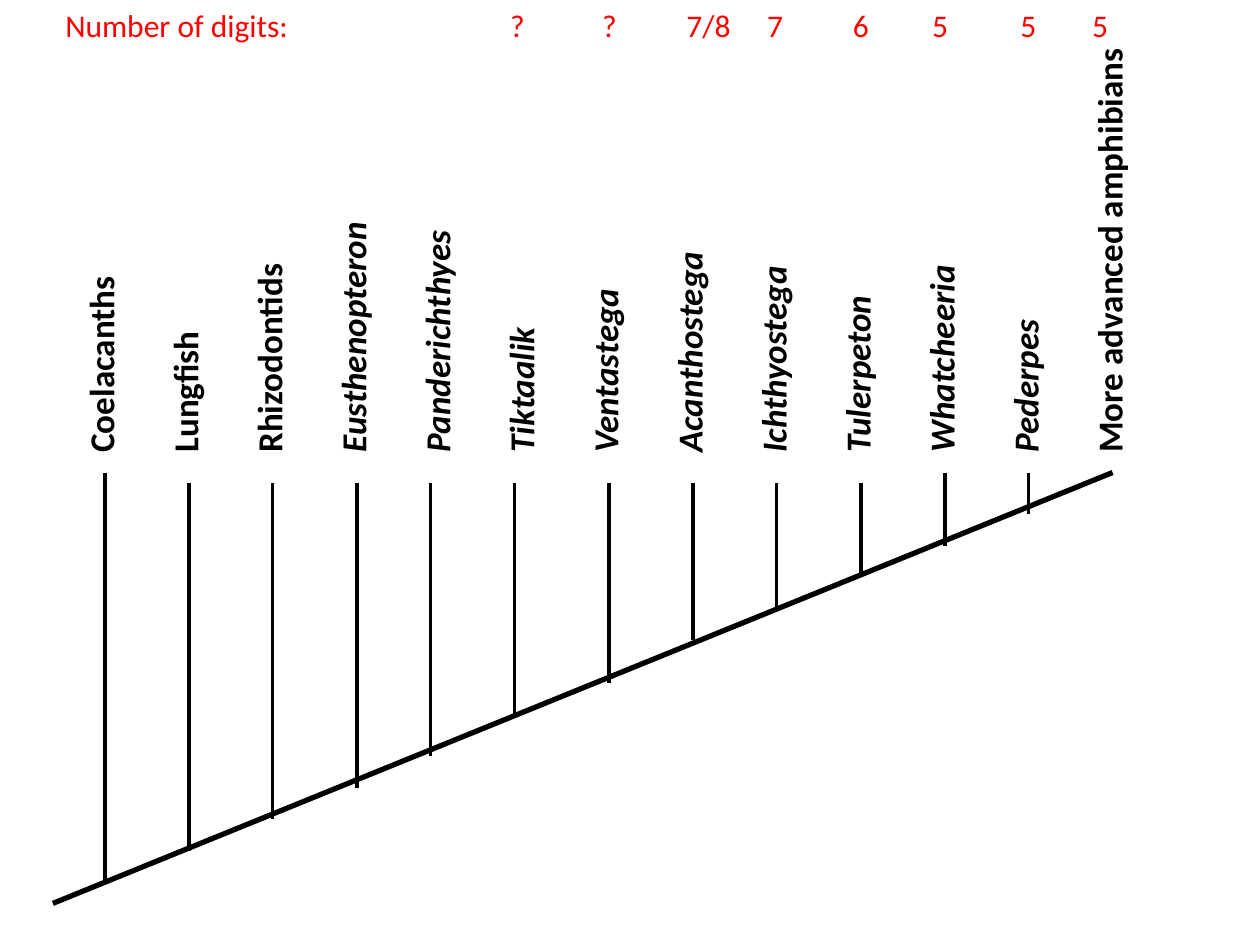
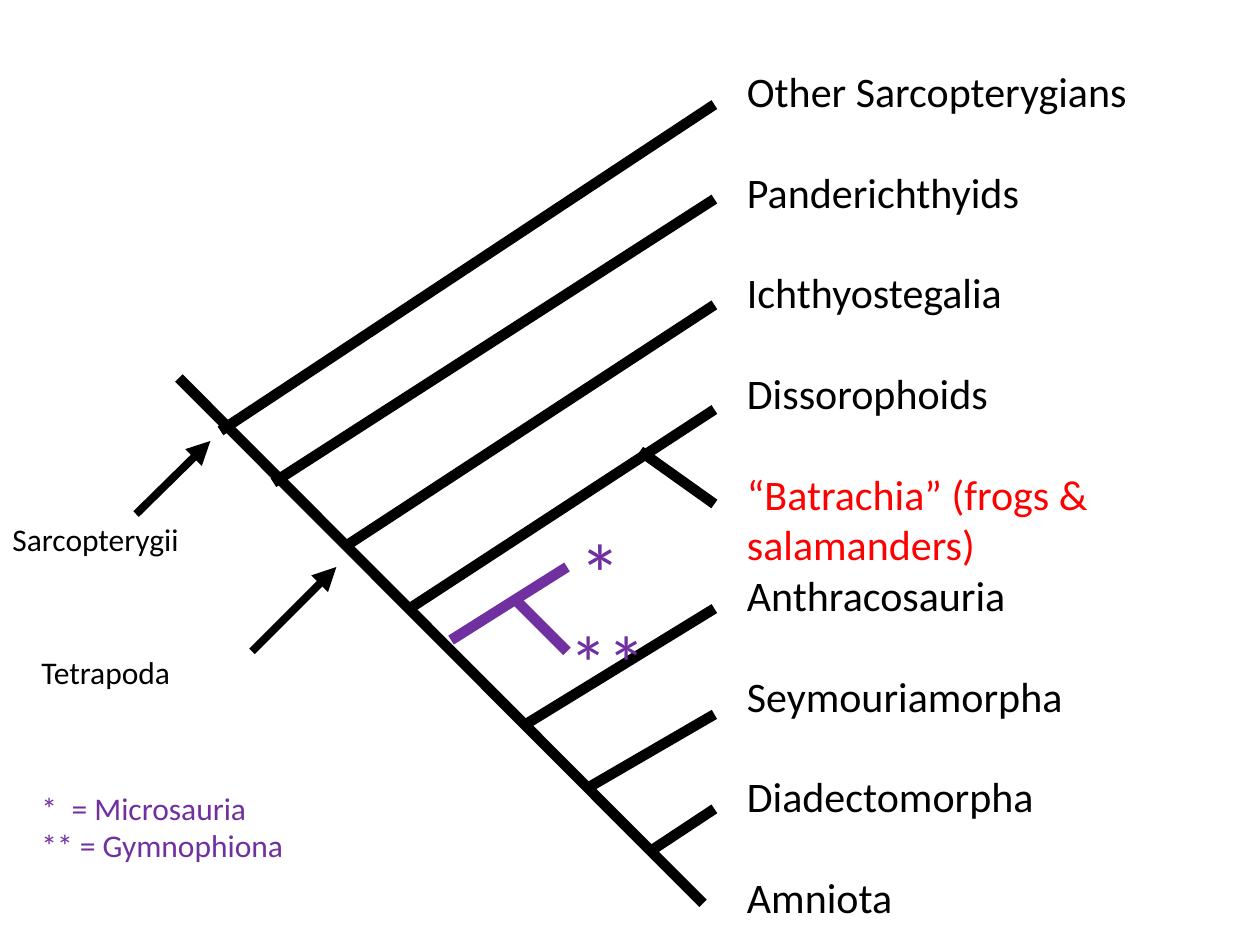
import pptx
import pptx.dml.color
import pptx.enum.shapes
import pptx.enum.text
import pptx.util
from lxml import etree
from pptx.oxml.ns import qn
from pptx.util import Inches

BLACK, RED, PURPLE = "000000", "FF0000", "7030A0"
FONT = "Calibri"
LINE_HEIGHT = 1.2  # line pitch as a multiple of the text size

# Slide 1: name, italic, stem top, stem bottom, stem shift from the even grid
TAXA = [
    ("Coelacanths", False, 3.75, 7, 0),
    ("Lungfish", False, 3.83, 6.75, 0),
    ("Rhizodontids", False, 3.83, 6.5, 0),
    ("Eusthenopteron", True, 3.83, 6.25, 0),
    ("Panderichthyes", True, 3.83, 6, -0.08),
    ("Tiktaalik", True, 3.83, 5.67, -0.08),
    ("Ventastega", True, 3.83, 5.42, 0),
    ("Acanthostega", True, 3.83, 5.08, 0),
    ("Ichthyostega", True, 3.83, 4.83, 0),
    ("Tulerpeton", True, 3.83, 4.58, 0),
    ("Whatcheeria", True, 3.75, 4.33, 0),
    ("Pederpes", True, 3.75, 4.08, 0),
]
CROWN_GROUP = "More advanced amphibians"
FIRST_STEM, STEM_STEP = 0.83, 2 / 3
TRUNK = ((8.83, 3.75), (0.42, 7.17))
# Digit count and its tab position
DIGITS = [("?", 3.53), ("?", 4.26), ("7/8", 4.93), ("7", 5.57),
          ("6", 6.25), ("5", 6.88), ("5", 7.58), ("5", 8.15)]

# Slide 2: label, colour, whether an empty line's height comes before it
CLADES = [
    ("Other Sarcopterygians", BLACK, False),
    ("Panderichthyids", BLACK, True),
    ("Ichthyostegalia", BLACK, True),
    ("Dissorophoids", BLACK, True),
    ("“Batrachia” (frogs &", RED, True),
    ("salamanders)", RED, False),
    ("Anthracosauria", BLACK, False),
    ("Seymouriamorpha", BLACK, True),
    ("Diadectomorpha", BLACK, True),
    ("Amniota", BLACK, True),
]
TIP_X = 5.67
BACKBONE = ((1.42, 3), (5.58, 7.17))
# Branch start and the height of its tip
BRANCHES = [((1.75, 3.42), 0.83), ((2.17, 3.83), 1.58), ((2.75, 4.33), 2.42),
            ((3.25, 4.83), 3.25), ((4.17, 5.75), 4.83), ((4.67, 6.25), 5.67),
            ((5.17, 6.75), 6.42), ((5.08, 3.58), 4)]
MICROSAUR_BRANCHES = [((3.58, 5.08), (4.5, 4.5)), ((4.08, 4.75), (4.5, 5.17))]
NODE_ARROWS = [((1.08, 4.08), (1.67, 3.5)), ((2, 5.17), (2.67, 4.5))]
# Text, box, size, colour
NOTES = [
    ("Sarcopterygii", (0, 4.08, 2.15, 0.5), 18, BLACK),
    ("Tetrapoda", (0.23, 5.13, 1.72, 0.5), 18, BLACK),
    ("*", (4.5, 4.08, 0.7, 0.91), 48, PURPLE),
    ("**", (4.42, 4.83, 1, 0.84), 44, PURPLE),
]
LEGEND = ["*\t= Microsauria", "** = Gymnophiona"]


def colour(value):
    return pptx.dml.color.RGBColor.from_string(value)


def add_text(slide, box, size, lines, tabs=()):
    """Each line is (text, colour, gap before, font format values)."""
    shape = slide.shapes.add_textbox(*map(Inches, box))
    frame = shape.text_frame
    frame.word_wrap = True
    frame.auto_size = pptx.enum.text.MSO_AUTO_SIZE.NONE
    pitch = pptx.util.Pt(size * LINE_HEIGHT)
    for index, (text, text_colour, gap, font_format) in enumerate(lines):
        paragraph = frame.add_paragraph() if index else frame.paragraphs[0]
        paragraph.line_spacing = pitch
        paragraph.space_before = pitch if gap else 0
        if tabs:
            properties = paragraph._p.get_or_add_pPr()
            tab_list = etree.SubElement(properties, qn("a:tabLst"))
            for position in tabs:
                etree.SubElement(tab_list, qn("a:tab"),
                                 pos=str(Inches(position)), algn="l")
        run = paragraph.add_run()
        run.text = text
        values = {"name": FONT, "size": pptx.util.Pt(size), **font_format}
        for attribute, value in values.items():
            setattr(run.font, attribute, value)
        run.font.color.rgb = colour(text_colour)
    return shape


def add_line(slide, start, end, width, line_colour=BLACK, arrow=False):
    connector = slide.shapes.add_connector(
        pptx.enum.shapes.MSO_CONNECTOR.STRAIGHT, *map(Inches, (*start, *end)))
    connector.line.width = pptx.util.Pt(width)
    connector.line.color.rgb = colour(line_colour)
    if arrow:
        etree.SubElement(connector.line._get_or_add_ln(), qn("a:tailEnd"), type="triangle")
    etree.SubElement(connector._element.spPr, qn("a:effectLst"))


def build_digit_slide(slide):
    # Upright names, one column per taxon
    names = [(name, italic) for name, italic, *_ in TAXA] + [(CROWN_GROUP, False)]
    lines = [(name, BLACK, index > 0, {"bold": True, "italic": italic})
             for index, (name, italic) in enumerate(names)]
    add_text(slide, (3.04, -2.37, 3.6, 8.52), 20, lines).rotation = 270

    # Trunk and stems
    add_line(slide, *TRUNK, 3)
    for index, (_, _, top, bottom, shift) in enumerate(TAXA):
        x = FIRST_STEM + index * STEM_STEP + shift
        add_line(slide, (x, top), (x, bottom), 2.25)

    # Digit counts on tab stops
    counts, tabs = zip(*DIGITS)
    text = "\t".join(("Number of digits:", *counts))
    add_text(slide, (0.42, 0, 8.9, 0.4), 18, [(text, RED, False, {})], tabs)


def build_clade_slide(slide):
    # Tip labels
    add_text(slide, (5.83, 0.47, 3.5, 6.97), 24,
             [(*clade, {}) for clade in CLADES])

    # Tree
    add_line(slide, *BACKBONE, 6)
    for start, tip_y in BRANCHES:
        add_line(slide, start, (TIP_X, tip_y), 6)
    for start, end in MICROSAUR_BRANCHES:
        add_line(slide, start, end, 6, PURPLE)
    for start, end in NODE_ARROWS:
        add_line(slide, start, end, 4.5, arrow=True)

    # Node names, marks and legend
    for text, box, size, text_colour in NOTES:
        add_text(slide, box, size, [(text, text_colour, False, {})])
    add_text(slide, (0.23, 6.21, 2.4, 0.71), 18,
             [(text, PURPLE, False, {}) for text in LEGEND], [0.24])


def main():
    presentation = pptx.Presentation()
    presentation.slide_width = Inches(10)
    presentation.slide_height = Inches(7.5)
    blank_layout = presentation.slide_layouts[6]
    for build in (build_digit_slide, build_clade_slide):
        build(presentation.slides.add_slide(blank_layout))
    presentation.save("out.pptx")


if __name__ == "__main__":
    main()
